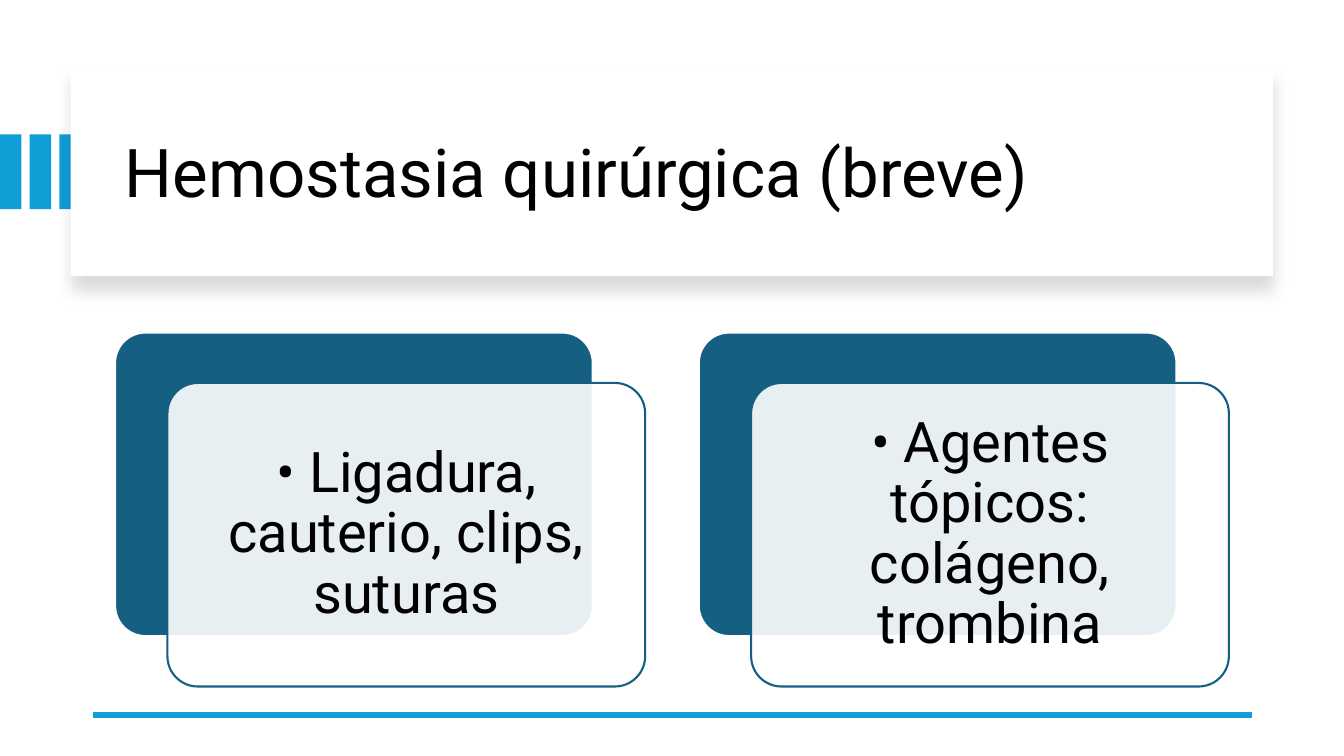
from lxml.etree import SubElement
from pptx import Presentation
from pptx.dml.color import RGBColor
from pptx.enum.shapes import MSO_CONNECTOR, MSO_SHAPE
from pptx.enum.text import MSO_ANCHOR, PP_ALIGN
from pptx.oxml.ns import qn
from pptx.util import Cm, Pt

WHITE = RGBColor(0xFF, 0xFF, 0xFF)
BLACK = RGBColor(0x00, 0x00, 0x00)
SKY = RGBColor(0x0F, 0x9E, 0xD5)
TEAL = RGBColor(0x15, 0x60, 0x82)


class SlideBuilder:
    """Draws styled elements on one slide, with lengths in centimetres."""

    font_name = "Roboto"
    line_spacing = 0.9

    def __init__(self, slide):
        self.slide = slide

    def block(self, left, top, width, height, fill, outline=None, rounded=False):
        kind = MSO_SHAPE.ROUNDED_RECTANGLE if rounded else MSO_SHAPE.RECTANGLE
        block = self.slide.shapes.add_shape(
            kind, Cm(left), Cm(top), Cm(width), Cm(height))
        block.shadow.inherit = False
        block.fill.solid()
        block.fill.fore_color.rgb = fill
        if rounded:
            block.adjustments[0] = 0.1
        if outline is None:
            block.line.fill.background()
        else:
            block.line.color.rgb = outline
            block.line.width = Pt(1.5)
        return block

    def set_opacity(self, block, percent):
        color = block._element.spPr.find(qn("a:solidFill"))[0]
        SubElement(color, qn("a:alpha"), val=str(percent * 1000))

    def drop_shadow(self, block, blur, distance, percent):
        effects = block._element.spPr.find(qn("a:effectLst"))
        shadow = SubElement(
            effects, qn("a:outerShdw"), blurRad=str(Pt(blur)),
            dist=str(Pt(distance)), dir="5400000", algn="t", rotWithShape="0")
        color = SubElement(shadow, qn("a:srgbClr"), val=str(BLACK))
        SubElement(color, qn("a:alpha"), val=str(percent * 1000))

    def add_text(self, frame, text, size, align):
        frame.word_wrap = True
        frame.vertical_anchor = MSO_ANCHOR.MIDDLE
        paragraph = frame.paragraphs[0]
        paragraph.alignment = align
        paragraph.line_spacing = self.line_spacing
        run = paragraph.add_run()
        run.text = text
        run.font.name = self.font_name
        run.font.size = Pt(size)
        run.font.color.rgb = BLACK

    def title(self, left, top, width, height, text):
        heading = self.slide.shapes.add_textbox(
            Cm(left), Cm(top), Cm(width), Cm(height))
        self.add_text(heading.text_frame, text, 48, PP_ALIGN.LEFT)

    def rule(self, start, end, y):
        rule = self.slide.shapes.add_connector(
            MSO_CONNECTOR.STRAIGHT, Cm(start), Cm(y), Cm(end), Cm(y))
        rule.line.color.rgb = SKY
        rule.line.width = Pt(4.5)
        SubElement(rule._element.spPr, qn("a:effectLst"))

    def layered_card(self, left, top, width, height, text):
        self.block(left, top, width, height, TEAL, WHITE, rounded=True)
        front = self.block(
            left + 1.32, top + 1.27, width, height, WHITE, TEAL, rounded=True)
        self.set_opacity(front, 90)
        frame = front.text_frame
        frame.margin_left = frame.margin_right = Cm(0.43)
        frame.margin_top = frame.margin_bottom = Cm(0.43)
        self.add_text(frame, text, 40, PP_ALIGN.CENTER)


def main():
    presentation = Presentation()
    presentation.slide_width = Cm(33.87)
    presentation.slide_height = Cm(19.05)
    builder = SlideBuilder(
        presentation.slides.add_slide(presentation.slide_layouts[6]))

    for stripe in range(3):
        builder.block(stripe * 0.75, 3.39, 0.54, 1.88, SKY)

    banner = builder.block(1.78, 1.7, 30.3, 5.26, WHITE)
    builder.drop_shadow(banner, blur=11, distance=10, percent=15)
    builder.title(2.9, 2.26, 28.27, 4.32, "Hemostasia quirúrgica (breve)")
    builder.rule(31.55, 2.34, 18.01)

    methods = (
        "• Ligadura, cauterio, clips, suturas",
        "• Agentes tópicos: colágeno, trombina",
    )
    for column, method in enumerate(methods):
        builder.layered_card(2.9 + column * 14.71, 8.38, 12.04, 7.65, method)

    presentation.save("out.pptx")


if __name__ == "__main__":
    main()
